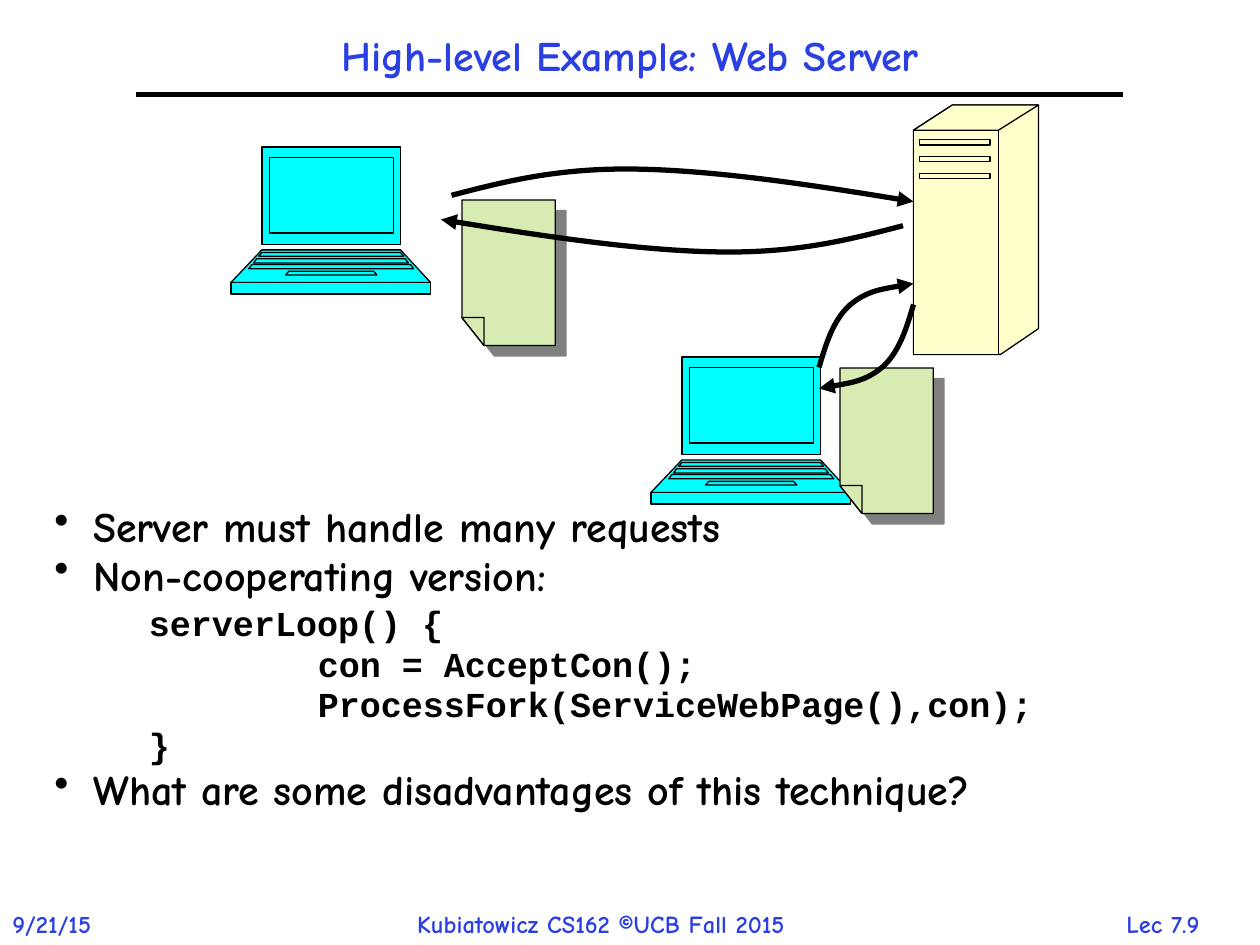
from dataclasses import dataclass

from lxml import etree
from pptx import Presentation
from pptx.dml.color import RGBColor
from pptx.enum.shapes import MSO_CONNECTOR
from pptx.enum.text import MSO_ANCHOR, PP_ALIGN
from pptx.oxml.ns import qn
from pptx.util import Emu, Inches, Pt

CENTER, LEFT = PP_ALIGN.CENTER, PP_ALIGN.LEFT
MIDDLE = MSO_ANCHOR.MIDDLE
STRAIGHT = MSO_CONNECTOR.STRAIGHT
TITLE_ONLY = 5
CELL = Inches(1) / 12  # the slide is a grid of 120 columns by 90 rows
BLUE, BLACK, CYAN = "2A40E2", "000000", "00FFFF"
CREAM, GREEN, GRAY = "FFFFCC", "D8EBB3", "808080"
SANS, MONO = "Comic Neue", "Courier New"

Point = tuple[float, float]
Contour = list[Point]


@dataclass
class Drawing:
    """Closed contours, in cells from the drawing's own corner."""
    contours: list[Contour]
    fill: str
    shadow: bool = False


@dataclass
class Arrow:
    """Two joined Bezier curves: seven points, in cells."""
    points: Contour

    def turned(self, column_sum: float, row_sum: float) -> "Arrow":
        """The same arrow after half a turn."""
        return Arrow([(column_sum - x, row_sum - y) for x, y in self.points])


@dataclass
class Line:
    text: str
    size: int = 24
    font: str = SANS
    indent: float = 0.31
    bullet: bool = True
    space: float = 4.8


@dataclass
class Footer:
    text: str
    column: float
    columns: float
    align: PP_ALIGN = LEFT


def rectangle(left: float, top: float, right: float, bottom: float) -> Contour:
    return [(left, top), (right, top), (right, bottom), (left, bottom)]


def key_row(top: float, bottom: float, left: float, right: float) -> Contour:
    """A strip that widens by 0.3 cells on each side."""
    return [(left, top), (left - 0.3, bottom), (right + 0.3, bottom), (right, top)]


LAPTOP = Drawing([
    rectangle(2.95, 0, 16.15, 9.3),
    [(2.95, 9.8), (0, 12.9), (19, 12.9), (16.15, 9.8)],
    rectangle(0, 12.9, 19, 14),
    rectangle(3.65, 1, 15.45, 8.2),
    key_row(10.05, 10.4, 2.95, 16.15),
    key_row(11.85, 12.2, 5.5, 13.6),
    key_row(10.65, 11.05, 2.45, 16.6),
    key_row(11.2, 11.6, 2, 17.1),
], CYAN)
SERVER = Drawing([
    [(0, 2.4), (3.7, 0), (11.9, 0), (11.9, 21.3), (8.3, 23.75), (0, 23.75)],
    [(0, 2.4), (3.7, 0), (11.9, 0), (8.1, 2.4)],
    rectangle(0, 2.4, 8.1, 23.75),
    *[rectangle(0.6, top, 7.3, top + 0.5) for top in (3.3, 4.9, 6.5)],
], CREAM)
PAGE = Drawing([
    [(0, 0), (8.9, 0), (8.9, 13.85), (2.1, 13.85), (0, 11.2)],
    [(0, 11.2), (2.1, 11.2), (2.1, 13.85)],
], GREEN, shadow=True)

FAR_REQUEST = Arrow([(43, 18.6), (48, 17.3), (53, 16), (60.4, 16.1),
                     (67.7, 16.2), (77.4, 17.6), (87, 19.2)])
NEAR_REQUEST = Arrow([(78, 35), (78.7, 32.6), (79.4, 30.4), (81, 29),
                      (82.6, 27.7), (84.7, 27.4), (87, 27)])

LINES = [
    Line("Server must handle many requests"),
    Line("Non-cooperating version:"),
    Line("serverLoop() {", 20, MONO, 0.75, False, 6),
    Line("con = AcceptCon();", 20, MONO, 2.09, False, 4),
    Line("ProcessFork(ServiceWebPage(),con);", 20, MONO, 2.09, False, 4),
    Line("}", 20, MONO, 0.75, False, 4),
    Line("What are some disadvantages of this technique?"),
]
FOOTERS = [
    Footer("9/21/15", 0, 12),
    Footer("Kubiatowicz CS162 ©UCB Fall 2015", 38.55, 43.3),
    Footer("Lec 7.9", 103.5, 14.5, CENTER),
]


def cells(count: float) -> Emu:
    return Emu(round(count * CELL))


def color(value: str) -> RGBColor:
    return RGBColor.from_string(value)


def place(shape, column: float, row: float, columns: float, rows: float) -> None:
    shape.left, shape.top = cells(column), cells(row)
    shape.width, shape.height = cells(columns), cells(rows)


def style_line(shape, width: float) -> None:
    shape.line.color.rgb = color(BLACK)
    shape.line.width = Pt(width)


def style_text(para, size: float, font: str, value: str) -> None:
    para.font.size, para.font.name, para.font.bold = Pt(size), font, True
    para.font.color.rgb = color(value)


def add_outline(slide, contours: list[Contour], close: bool):
    builder = None
    for contour in contours:
        start, *others = [(cells(x), cells(y)) for x, y in contour]
        if builder is None:
            builder = slide.shapes.build_freeform(*start)
        else:
            builder.move_to(*start)
        builder.add_line_segments(others, close=close)
    shape = builder.convert_to_shape()
    shape.shadow.inherit = False
    return shape


def split_contours(shape) -> None:
    """Give each contour its own path, so that nested ones are filled too."""
    whole = next(shape._element.iter(qn("a:path")))
    current = whole
    for step in list(whole)[1:]:
        if step.tag == qn("a:moveTo"):
            current = etree.SubElement(whole.getparent(), qn("a:path"), dict(whole.attrib))
        if current is not whole:
            current.append(step)


def bend_lines(shape) -> None:
    """Turn each three line segments into one cubic Bezier curve."""
    path = next(shape._element.iter(qn("a:path")))
    segments = path.findall(qn("a:lnTo"))
    for first in range(0, len(segments), 3):
        curve = etree.SubElement(path, qn("a:cubicBezTo"))
        for segment in segments[first:first + 3]:
            curve.append(segment[0])
            path.remove(segment)


def add_shadow(shape) -> None:
    effects = shape._element.spPr.find(qn("a:effectLst"))
    shadow = etree.SubElement(effects, qn("a:outerShdw"), dist=str(Pt(8.5)),
                              dir="2700000", algn="ctr", rotWithShape="0")
    etree.SubElement(shadow, qn("a:srgbClr"), val=GRAY)


def add_drawing(slide, drawing: Drawing, column: float, row: float) -> None:
    contours = [[(column + x, row + y) for x, y in contour] for contour in drawing.contours]
    shape = add_outline(slide, contours, close=True)
    split_contours(shape)
    shape.fill.solid()
    shape.fill.fore_color.rgb = color(drawing.fill)
    style_line(shape, 0.75)
    if drawing.shadow:
        add_shadow(shape)


def add_arrow(slide, arrow: Arrow) -> None:
    shape = add_outline(slide, [arrow.points], close=False)
    bend_lines(shape)
    shape.fill.background()
    style_line(shape, 3)
    etree.SubElement(shape._element.spPr.find(qn("a:ln")), qn("a:tailEnd"), type="triangle")


def add_body(slide) -> None:
    frame = slide.shapes.add_textbox(cells(4), cells(48), cells(104), cells(37)).text_frame
    frame.word_wrap = True
    for number, line in enumerate(LINES):
        para = frame.add_paragraph() if number else frame.paragraphs[0]
        para.text = line.text
        para.line_spacing, para.space_before = 0.8, Pt(line.space)
        style_text(para, line.size, line.font, BLACK)
        properties = para._p.get_or_add_pPr()
        properties.set("marL", str(Inches(line.indent)))
        if line.bullet:
            properties.set("indent", str(-Inches(line.indent)))
            defaults = properties.find(qn("a:defRPr"))
            defaults.addprevious(etree.Element(qn("a:buFontTx")))
            defaults.addprevious(etree.Element(qn("a:buChar"), char="•"))


def add_footer(slide, footer: Footer) -> None:
    box = slide.shapes.add_textbox(0, 0, 0, 0)
    place(box, footer.column, 86, footer.columns, 4)
    box.text_frame.word_wrap = False
    para = box.text_frame.paragraphs[0]
    para.text, para.alignment = footer.text, footer.align
    style_text(para, 14, SANS, BLUE)


def add_title(slide) -> None:
    title = slide.shapes.title
    place(title, 13, 2, 94, 7)
    title.text_frame.vertical_anchor = MIDDLE
    para = title.text_frame.paragraphs[0]
    para.text, para.alignment, para.line_spacing = "High-level Example: Web Server", CENTER, 0.9
    style_text(para, 24, SANS, BLUE)
    rule = slide.shapes.add_connector(STRAIGHT, cells(13), cells(9), cells(107), cells(9))
    style_line(rule, 3)
    etree.SubElement(rule._element.spPr, qn("a:effectLst"))


def main() -> None:
    deck = Presentation()
    deck.slide_width, deck.slide_height = cells(120), cells(90)
    slide = deck.slides.add_slide(deck.slide_layouts[TITLE_ONLY])
    add_title(slide)
    for footer in FOOTERS:
        add_footer(slide, footer)
    add_body(slide)
    add_drawing(slide, SERVER, 87, 10)
    add_drawing(slide, LAPTOP, 22, 14)
    add_arrow(slide, FAR_REQUEST)
    add_drawing(slide, PAGE, 44, 19.05)
    add_drawing(slide, LAPTOP, 62, 34)
    add_arrow(slide, NEAR_REQUEST)
    add_drawing(slide, PAGE, 80, 35.05)
    add_arrow(slide, NEAR_REQUEST.turned(165, 64))
    add_arrow(slide, FAR_REQUEST.turned(129, 40.1))
    deck.save("out.pptx")


if __name__ == "__main__":
    main()
